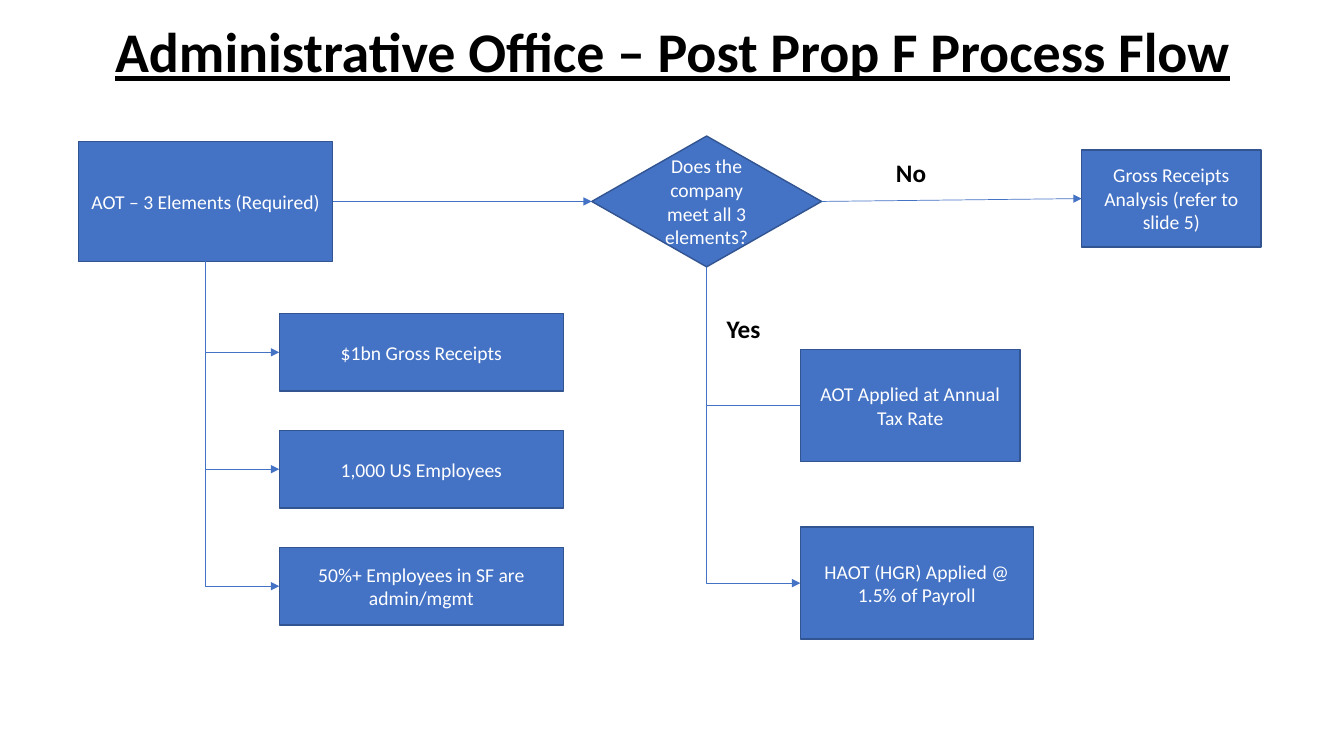
from dataclasses import dataclass

from lxml.etree import SubElement
from pptx import Presentation
from pptx.dml.color import RGBColor
from pptx.enum.shapes import MSO_CONNECTOR, MSO_SHAPE
from pptx.enum.text import MSO_ANCHOR, PP_ALIGN
from pptx.oxml.ns import qn
from pptx.util import Inches, Pt

BLUE = RGBColor(0x44, 0x72, 0xC4)
NAVY = RGBColor(0x32, 0x54, 0x91)
WHITE = RGBColor(0xFF, 0xFF, 0xFF)
BLACK = RGBColor(0x00, 0x00, 0x00)

SLIDE_WIDTH = Inches(13.333)
SLIDE_HEIGHT = Inches(7.5)
LEFT_SITE, BOTTOM_SITE, RIGHT_SITE = 1, 2, 3

CRITERIA_TOP = 41.47
CRITERIA_PITCH = 15.47
OUTCOME_LEFT = 59.55
OUTCOME_HEIGHT = 14.8


@dataclass(frozen=True)
class Area:
    """Percentages of the slide's width and height."""
    left: float
    top: float
    width: float
    height: float

    def emu(self):
        return (int(SLIDE_WIDTH * self.left / 100), int(SLIDE_HEIGHT * self.top / 100),
                int(SLIDE_WIDTH * self.width / 100), int(SLIDE_HEIGHT * self.height / 100))


@dataclass(frozen=True)
class Step:
    text: str
    area: Area
    outline: MSO_SHAPE = MSO_SHAPE.RECTANGLE


@dataclass(frozen=True)
class Flow:
    source: str
    target: str
    bent: bool = False
    arrow: bool = True


@dataclass(frozen=True)
class Answer:
    text: str
    left: float
    top: float


CRITERIA = ["$1bn Gross Receipts", "1,000 US Employees", "50%+ Employees in SF are admin/mgmt"]

STEPS = {
    "elements": Step("AOT – 3 Elements (Required)", Area(5.85, 18.72, 18.9, 15.86)),
    "decision": Step("Does the company meet all 3 elements?", Area(44.03, 18, 17.1, 17.3),
                     MSO_SHAPE.DIAMOND),
    "receipts": Step("Gross Receipts Analysis (refer to slide 5)", Area(80.48, 19.87, 13.35, 12.8)),
    "annual": Step("AOT Applied at Annual Tax Rate",
                   Area(OUTCOME_LEFT, 46.27, 16.35, OUTCOME_HEIGHT)),
    "payroll": Step("HAOT (HGR) Applied @ 1.5% of Payroll",
                    Area(OUTCOME_LEFT, 69.73, 17.33, OUTCOME_HEIGHT)),
} | {
    criterion: Step(criterion, Area(20.78, CRITERIA_TOP + row * CRITERIA_PITCH, 21.15, 10.27))
    for row, criterion in enumerate(CRITERIA)
}

FLOWS = [
    Flow("elements", "decision"),
    Flow("decision", "receipts"),
    Flow("decision", "annual", bent=True, arrow=False),
    Flow("decision", "payroll", bent=True),
] + [Flow("elements", criterion, bent=True) for criterion in CRITERIA]

ANSWERS = [Answer("Yes", 53.33, 40.8), Answer("No", 65.93, 20.13)]


def write(holder, text: str, *, size: float, color: RGBColor, bold: bool = False,
          underline: bool = False, align=PP_ALIGN.LEFT, anchor=MSO_ANCHOR.TOP,
          spacing: float = 1.0) -> None:
    frame = holder.text_frame
    frame.word_wrap = True
    frame.vertical_anchor = anchor
    paragraph = frame.paragraphs[0]
    paragraph.alignment = align
    paragraph.line_spacing = spacing
    run = paragraph.add_run()
    run.text = text
    run.font.name = "Calibri"
    run.font.size = Pt(size)
    run.font.bold = bold
    run.font.underline = underline
    run.font.color.rgb = color


def draw_step(slide, step: Step):
    box = slide.shapes.add_shape(step.outline, *step.area.emu())
    box.shadow.inherit = False
    box.fill.solid()
    box.fill.fore_color.rgb = BLUE
    box.line.color.rgb = NAVY
    box.line.width = Pt(1)
    write(box, step.text, size=14, color=WHITE, align=PP_ALIGN.CENTER, anchor=MSO_ANCHOR.MIDDLE)
    return box


def bend_down_then_right(link) -> None:
    left, top, across, down = link.left, link.top, link.width, link.height
    link.left = left + (across - down) // 2
    link.top = top + (down - across) // 2
    link.width, link.height = down, across
    properties = link._element.spPr
    frame = properties.find(qn("a:xfrm"))
    frame.set("rot", "16200000")
    frame.set("flipH", "1")
    properties.find(qn("a:prstGeom")).set("prst", "bentConnector2")


def draw_flow(slide, flow: Flow, boxes: dict) -> None:
    kind = MSO_CONNECTOR.ELBOW if flow.bent else MSO_CONNECTOR.STRAIGHT
    link = slide.shapes.add_connector(kind, 0, 0, 0, 0)
    link.begin_connect(boxes[flow.source], BOTTOM_SITE if flow.bent else RIGHT_SITE)
    link.end_connect(boxes[flow.target], LEFT_SITE)
    if flow.bent:
        bend_down_then_right(link)
    link.line.color.rgb = BLUE
    link.line.width = Pt(0.5)
    properties = link._element.spPr
    if flow.arrow:
        SubElement(properties.find(qn("a:ln")), qn("a:tailEnd"), type="triangle")
    SubElement(properties, qn("a:effectLst"))


def main() -> None:
    deck = Presentation()
    deck.slide_width = SLIDE_WIDTH
    deck.slide_height = SLIDE_HEIGHT
    slide = deck.slides.add_slide(deck.slide_layouts[6])

    title = slide.shapes.add_textbox(*Area(6.9, 3.33, 86.25, 8.53).emu())
    write(title, "Administrative Office – Post Prop F Process Flow", size=40, color=BLACK,
          bold=True, underline=True, align=PP_ALIGN.CENTER, anchor=MSO_ANCHOR.BOTTOM, spacing=0.9)

    boxes = {key: draw_step(slide, step) for key, step in STEPS.items()}
    for flow in FLOWS:
        draw_flow(slide, flow, boxes)
    for answer in ANSWERS:
        label = slide.shapes.add_textbox(*Area(answer.left, answer.top, 5.55, 5.33).emu())
        write(label, answer.text, size=18, color=BLACK, bold=True)

    deck.save("out.pptx")


if __name__ == "__main__":
    main()
